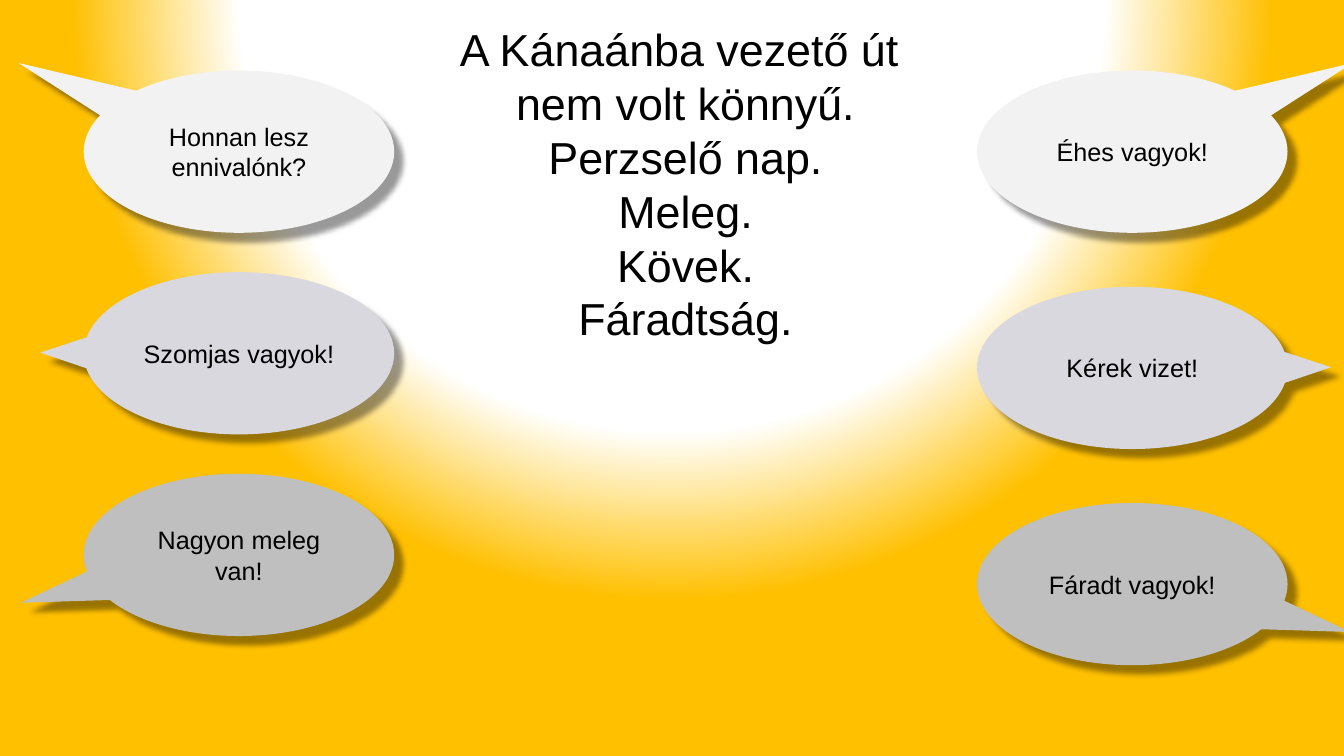
from lxml import etree
from pptx import Presentation
from pptx.dml.color import RGBColor
from pptx.enum.shapes import MSO_SHAPE as Shape
from pptx.enum.text import MSO_ANCHOR as Anchor, MSO_AUTO_SIZE as AutoSize, PP_ALIGN as Align
from pptx.oxml import parse_xml
from pptx.oxml.ns import nsdecls, qn
from pptx.util import Inches, Pt

COLORS = {"text": "000000", "shadow": "000000", "sky": "FFFFFF", "sun": "FFC000",
          "light": "F2F2F2", "lilac": "D8D8DE", "gray": "BFBFBF"}
FONT = "Arial"
BUBBLE_WIDTH, BUBBLE_HEIGHT = 3.08, 1.61
BUBBLE_STYLES = [("light", 0.71, -0.547), ("lilac", 0.64, -0.004), ("gray", 0.702, 0.295)]
JOURNEY = ["A Kánaánba vezető út ", "nem volt könnyű.", "Perzselő nap.",
           "Meleg.", "Kövek.", "Fáradtság."]
LEFT_CRIES = ["Honnan lesz ennivalónk?", "Szomjas vagyok!", "Nagyon meleg van!"]
RIGHT_CRIES = ["Éhes vagyok!", "Kérek vizet!", "Fáradt vagyok!"]


def paint_background(slide):
    """Fill the slide with a white glow that fades to gold."""
    stops = "".join(f'<a:gs pos="{position * 1000}"><a:srgbClr val="{COLORS[color]}"/></a:gs>'
                    for position, color in [(0, "sky"), (56, "sky"), (78, "sun")])
    glow = parse_xml(
        f'<p:bg {nsdecls("p", "a")}><p:bgPr><a:gradFill rotWithShape="1">'
        f'<a:gsLst>{stops}</a:gsLst><a:path path="circle">'
        '<a:fillToRect l="50000" t="-80000" r="50000" b="180000"/></a:path>'
        '</a:gradFill><a:effectLst/></p:bgPr></p:bg>')
    slide.element.find(qn("p:cSld")).insert(0, glow)


def write_line(paragraph, words, size):
    """Write one centred line of text."""
    paragraph.alignment = Align.CENTER
    run = paragraph.add_run()
    run.text = words
    run.font.name = FONT
    run.font.size = Pt(size)
    run.font.color.rgb = RGBColor.from_string(COLORS["text"])


def add_journey(slide, left, top, width, height):
    """Place the story lines in the title placeholder."""
    title = slide.shapes.title
    title.left, title.top = Inches(left), Inches(top)
    title.width, title.height = Inches(width), Inches(height)
    frame = title.text_frame
    frame.word_wrap = True
    frame.auto_size = AutoSize.NONE
    frame.vertical_anchor = Anchor.TOP
    for index, words in enumerate(JOURNEY):
        paragraph = frame.add_paragraph() if index else frame.paragraphs[0]
        write_line(paragraph, words, 32)


def cast_shadow(bubble):
    """Give a bubble a soft shadow to the lower right."""
    bubble.shadow.inherit = False
    effects = bubble.element.spPr.find(qn("a:effectLst"))
    shadow = etree.SubElement(effects, qn("a:outerShdw"), blurRad=str(Pt(4)), dist=str(Pt(9)),
                              dir=str(45 * 60000), algn="tl", rotWithShape="0")
    color = etree.SubElement(shadow, qn("a:srgbClr"), val=COLORS["shadow"])
    etree.SubElement(color, qn("a:alpha"), val="40000")


def add_cries(slide, left, top, pitch, side, cries):
    """Stack speech bubbles whose tails point to the side: -1 left, 1 right."""
    for row, (words, (color, reach, drop)) in enumerate(zip(cries, BUBBLE_STYLES)):
        bubble = slide.shapes.add_shape(
            Shape.OVAL_CALLOUT, Inches(left), Inches(top + row * pitch),
            Inches(BUBBLE_WIDTH), Inches(BUBBLE_HEIGHT))
        bubble.adjustments[0] = side * reach
        bubble.adjustments[1] = drop
        bubble.fill.solid()
        bubble.fill.fore_color.rgb = RGBColor.from_string(COLORS[color])
        bubble.line.fill.background()
        cast_shadow(bubble)
        frame = bubble.text_frame
        frame.word_wrap = True
        frame.vertical_anchor = Anchor.MIDDLE
        write_line(frame.paragraphs[0], words, 18)


def main():
    """Build the slide and save it."""
    deck = Presentation()
    deck.slide_width, deck.slide_height = Inches(13.33), Inches(7.5)
    slide = deck.slides.add_slide(deck.slide_layouts[5])
    paint_background(slide)
    add_journey(slide, 2.14, 0.17, 9.32, 3.33)
    add_cries(slide, 0.83, 0.7, 2, -1, LEFT_CRIES)
    add_cries(slide, 9.69, 0.7, 2.145, 1, RIGHT_CRIES)
    deck.save("out.pptx")


if __name__ == "__main__":
    main()
